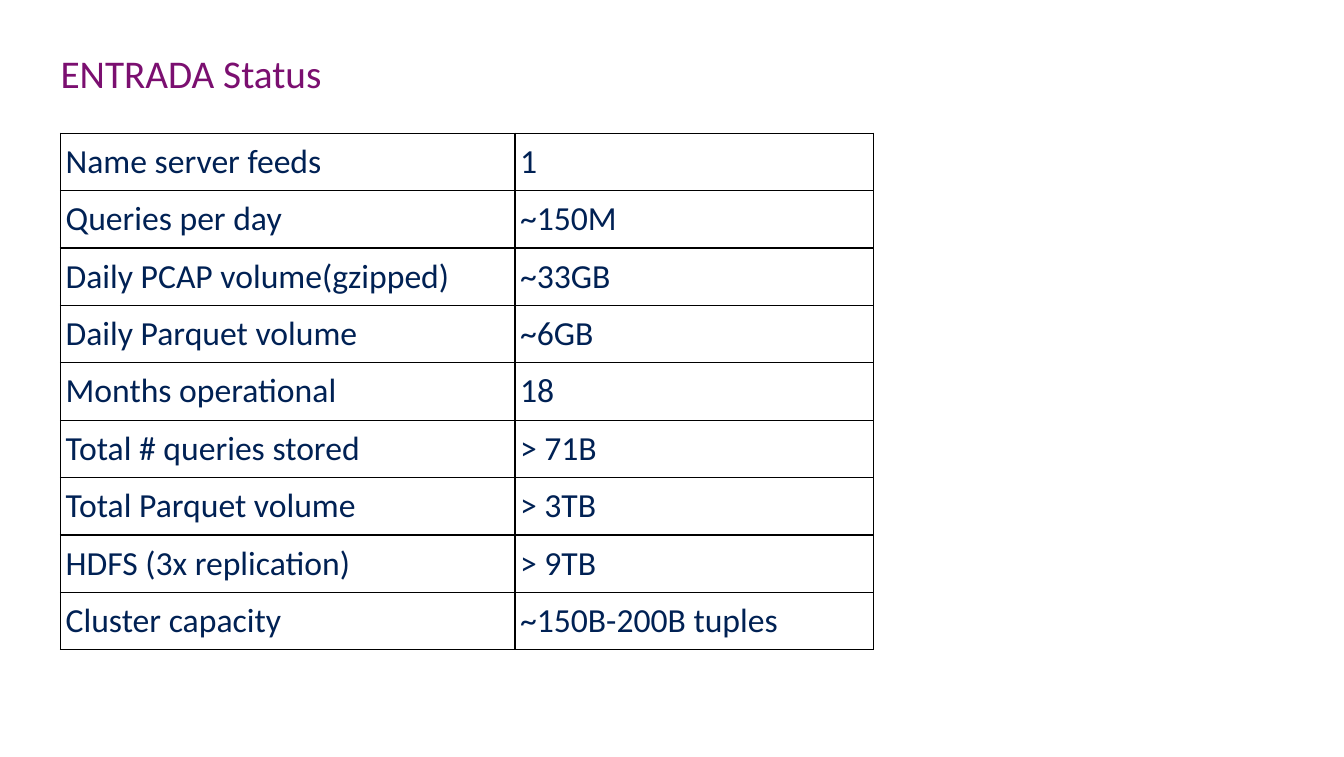
import pptx
import pptx.dml.color
import pptx.enum.text
import pptx.oxml.ns
import pptx.util
from lxml import etree

PX = 9144  # 100 px to the inch
THEME = {
    "font": "Calibri",
    "title_color": "7B0F70",
    "text_color": "002154",
    "border_color": "000000",
    "title_size": 28,
    "text_size": 24,
    "border_width": 1,
}
STATUS = [
    ("Name server feeds", "1"),
    ("Queries per day", "~150M"),
    ("Daily PCAP volume(gzipped)", "~33GB"),
    ("Daily Parquet volume", "~6GB"),
    ("Months operational", "18"),
    ("Total # queries stored", "> 71B"),
    ("Total Parquet volume", "> 3TB"),
    ("HDFS (3x replication)", "> 9TB"),
    ("Cluster capacity", "~150B-200B tuples"),
]
COLUMN_WIDTHS = [450, 355]


def px(count):
    return pptx.util.Emu(count * PX)


def add_span(para, text, size, color):
    span = para.add_run()
    span.text = text
    span.font.name = THEME["font"]
    span.font.size = pptx.util.Pt(size)
    span.font.color.rgb = pptx.dml.color.RGBColor.from_string(color)


deck = pptx.Presentation()
deck.slide_width, deck.slide_height = px(1331), px(750)
page = deck.slides.add_slide(deck.slide_layouts[5])

# Title
title = page.shapes.title
title.left, title.top, title.width, title.height = px(40), px(42), px(1248), px(73)
box = title.text_frame
box.word_wrap = True
box.auto_size = pptx.enum.text.MSO_AUTO_SIZE.NONE
box.vertical_anchor = pptx.enum.text.MSO_ANCHOR.MIDDLE
box.margin_left, box.margin_right = px(20), px(12)
box.margin_top = box.margin_bottom = 0
para = box.paragraphs[0]
para.alignment = pptx.enum.text.PP_ALIGN.LEFT
para.line_spacing = pptx.util.Pt(24)
add_span(para, "ENTRADA Status", THEME["title_size"], THEME["title_color"])

# Status table
table = page.shapes.add_table(
    len(STATUS), len(COLUMN_WIDTHS), px(60), px(132), px(sum(COLUMN_WIDTHS)), px(512)
).table
table.first_row = table.horz_banding = False
for column, width in zip(table.columns, COLUMN_WIDTHS):
    column.width = px(width)

for row, texts in zip(table.rows, STATUS):
    for cell, text in zip(row.cells, texts):
        cell.vertical_anchor = pptx.enum.text.MSO_ANCHOR.MIDDLE
        cell.margin_left = cell.margin_right = px(5)
        cell.margin_top = cell.margin_bottom = px(4)
        properties = cell._tc.get_or_add_tcPr()
        for side in ("a:lnL", "a:lnR", "a:lnT", "a:lnB"):
            border = etree.SubElement(properties, pptx.oxml.ns.qn(side))
            border.set("w", str(pptx.util.Pt(THEME["border_width"])))
            fill = etree.SubElement(border, pptx.oxml.ns.qn("a:solidFill"))
            color = etree.SubElement(fill, pptx.oxml.ns.qn("a:srgbClr"))
            color.set("val", THEME["border_color"])
        cell.fill.background()
        para = cell.text_frame.paragraphs[0]
        add_span(para, text, THEME["text_size"], THEME["text_color"])

deck.save("out.pptx")
